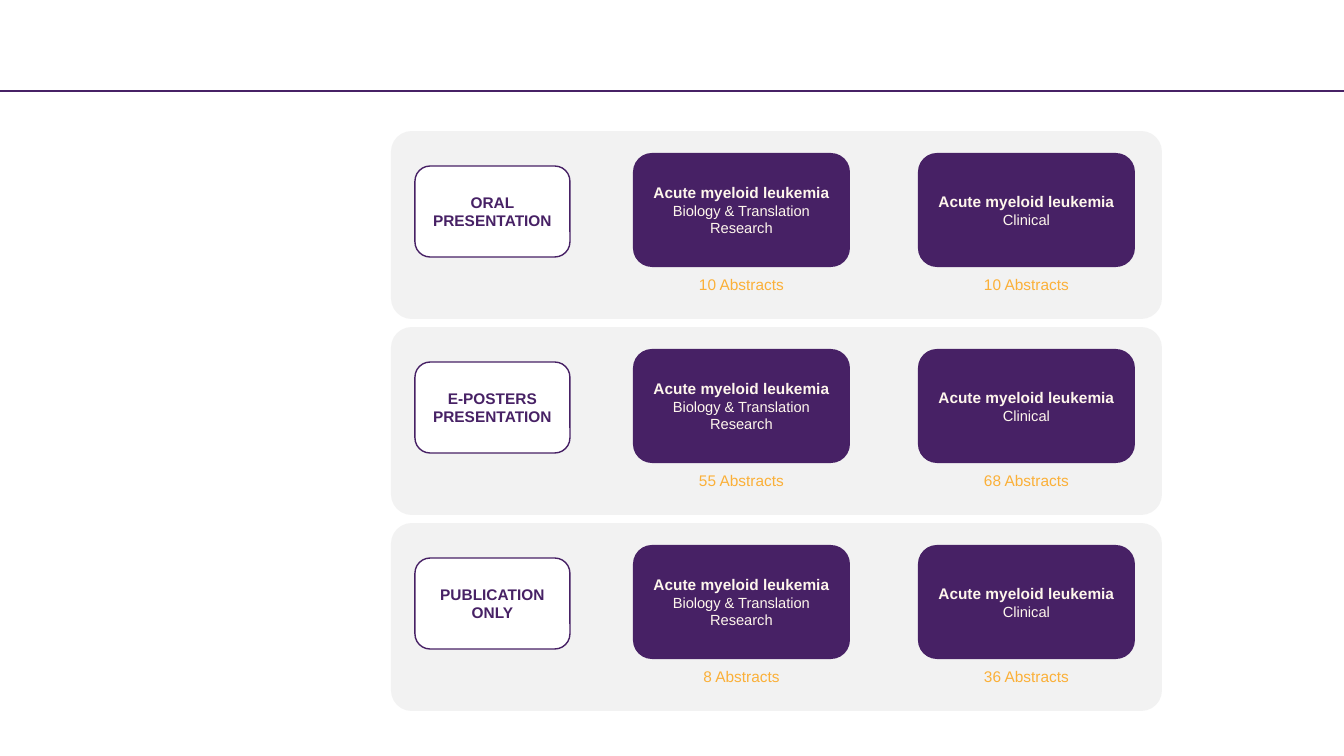
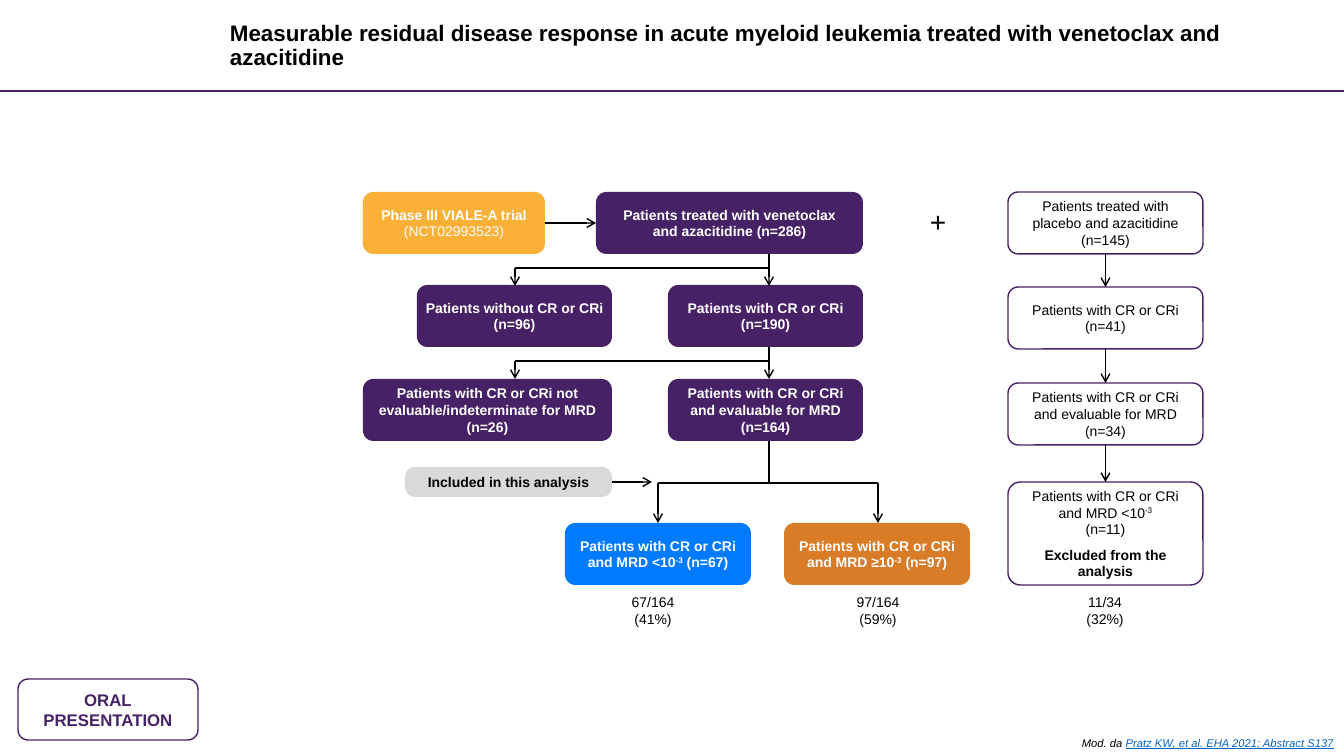
from itertools import pairwise

from lxml.etree import SubElement
from pptx import Presentation
from pptx.dml.color import RGBColor
from pptx.enum.shapes import MSO_CONNECTOR, MSO_SHAPE
from pptx.enum.text import MSO_ANCHOR, PP_ALIGN
from pptx.oxml.ns import qn
from pptx.util import Emu, Pt

SCALE = 914400 / 100.8  # EMU in one px
WIDTH, HEIGHT = 1344, 756
FONT = "Arial"

PURPLE = RGBColor(0x47, 0x21, 0x65)
AMBER = RGBColor(0xFB, 0xB0, 0x38)
ORANGE = RGBColor(0xD8, 0x7C, 0x27)
BLUE = RGBColor(0x00, 0x7A, 0xFF)
LINK = RGBColor(0x05, 0x63, 0xC1)
CREAM = RGBColor(0xFE, 0xF6, 0xEC)
PANEL = RGBColor(0xF2, 0xF2, 0xF2)
GREY = RGBColor(0xD9, 0xD9, 0xD9)
WHITE = RGBColor(0xFF, 0xFF, 0xFF)
BLACK = RGBColor(0x00, 0x00, 0x00)

POWER = ("-3", {"raised": True})


def px(n):
    return Emu(round(n * SCALE))


# Text
def add_run(p, text, size=10, color=BLACK, bold=False, italic=False,
            underline=False, raised=False):
    r = p.add_run()
    r.text = text
    font = r.font
    font.name, font.size = FONT, Pt(size)
    font.color.rgb = color
    font.bold, font.italic, font.underline = bold, italic, underline
    if raised:
        r._r.get_or_add_rPr().set("baseline", "30000")


def write(sp, paragraphs, align=PP_ALIGN.CENTER, anchor=MSO_ANCHOR.MIDDLE,
          inset=10, last_gap=0, spacing=None, **style):
    """Each paragraph is a string or a list of strings and (text, style) runs."""
    tf = sp.text_frame
    tf.word_wrap = True
    tf.vertical_anchor = anchor
    tf.margin_left = tf.margin_right = px(inset)
    tf.margin_top = tf.margin_bottom = px(5)
    for i, runs in enumerate(paragraphs):
        p = tf.add_paragraph() if i else tf.paragraphs[0]
        p.alignment = align
        if spacing:
            p.line_spacing = spacing
        for run in [runs] if isinstance(runs, str) else runs:
            text, extra = (run, {}) if isinstance(run, str) else run
            add_run(p, text, **{**style, **extra})
    if last_gap:
        p.space_before = Pt(last_gap)


def add_text(s, box, paragraphs, anchor=MSO_ANCHOR.TOP, **style):
    sp = s.shapes.add_textbox(*map(px, box))
    write(sp, paragraphs, anchor=anchor, **style)


# Shapes and lines
def add_box(s, box, paragraphs=(), fill=None, line=None, radius=None, **style):
    sp = s.shapes.add_shape(MSO_SHAPE.ROUNDED_RECTANGLE, *map(px, box))
    sp.shadow.inherit = False
    if radius is not None:
        sp.adjustments[0] = radius
    if fill is None:
        sp.fill.background()
    else:
        sp.fill.solid()
        sp.fill.fore_color.rgb = fill
    if line is None:
        sp.line.fill.background()
    else:
        sp.line.color.rgb = line
        sp.line.width = Pt(1)
    if paragraphs:
        write(sp, paragraphs, **style)
    return sp


def add_line(s, x1, y1, x2, y2, color=BLACK, width=1, arrow=False):
    line = s.shapes.add_connector(MSO_CONNECTOR.STRAIGHT, *map(px, (x1, y1, x2, y2)))
    line.line.color.rgb = color
    line.line.width = Pt(width)
    if arrow:
        SubElement(line.line._get_or_add_ln(), qn("a:tailEnd"), type="arrow")
    SubElement(line._element.spPr, qn("a:effectLst"))
    return line


def link_boxes(s, start, start_site, end, end_site):
    line = add_line(s, 0, 0, 0, 0, arrow=True)
    line.begin_connect(start, start_site)
    line.end_connect(end, end_site)


def add_fork(s, trunk_x, top, bar_y, bottom, left, right):
    add_line(s, trunk_x, top, trunk_x, bar_y)
    add_line(s, left, bar_y, right, bar_y)
    for x in (left, right):
        add_line(s, x, bar_y, x, bottom, arrow=True)


# Shared slide parts
def add_slide(prs, title=None):
    s = prs.slides.add_slide(prs.slide_layouts[6])
    add_line(s, 0, 91, WIDTH, 91, PURPLE, 2)
    if title:
        add_text(s, (220, 13, 1100, 66), [title], MSO_ANCHOR.MIDDLE,
                 align=PP_ALIGN.LEFT, size=16, bold=True, spacing=0.9)
    return s


def add_category(s, box, lines, size):
    add_box(s, box, lines, WHITE, PURPLE, size=size, color=PURPLE, bold=True)


# Slide 1: abstracts by category
def build_overview(prs):
    s = add_slide(prs)
    topics = [(633, "Biology & Translation Research"), (918, "Clinical")]
    categories = [
        (["ORAL", "PRESENTATION"], (10, 10)),
        (["E-POSTERS", "PRESENTATION"], (55, 68)),
        (["PUBLICATION", "ONLY"], (8, 36)),
    ]
    for i, (lines, counts) in enumerate(categories):
        top = 131 + 196 * i
        add_box(s, (391, top, 771, 188), fill=PANEL, radius=0.11)
        add_category(s, (415, top + 35, 155, 91), lines, 11)
        for (left, topic), count in zip(topics, counts):
            add_box(s, (left, top + 22, 217, 114),
                    [[("Acute myeloid leukemia", {"size": 11, "bold": True})], topic],
                    PURPLE, size=10.5, color=CREAM)
            add_text(s, (left, top + 139, 217, 29), [f"{count} Abstracts"],
                     size=11, color=AMBER)


# Slide 2: patient flow
def build_flow(prs):
    s = add_slide(prs, "Measurable residual disease response in acute myeloid "
                       "leukemia treated with venetoclax and azacitidine")
    add_category(s, (18, 679, 180, 61), ["ORAL", "PRESENTATION"], 12)
    responders = "Patients with CR or CRi"
    box_h = 62

    # Treated patients
    def add_step(left, top, width, paragraphs, fill=PURPLE, inset=10):
        return add_box(s, (left, top, width, box_h), paragraphs, fill,
                       color=WHITE, bold=True, inset=inset)

    trial = add_step(363, 192, 182, ["Phase III VIALE-A trial",
                                     [("(NCT02993523)", {"bold": False})]], AMBER)
    treated = add_step(596, 192, 267, ["Patients treated with venetoclax",
                                       "and azacitidine (n=286)"])
    link_boxes(s, trial, 3, treated, 1)
    add_step(417, 285, 195, ["Patients without CR or CRi", "(n=96)"], inset=0)
    add_step(668, 285, 195, [responders, "(n=190)"])
    add_step(363, 379, 249, ["Patients with CR or CRi not "
                             "evaluable/indeterminate for MRD", "(n=26)"], inset=0)
    add_step(668, 379, 195, [responders, "and evaluable for MRD (n=164)"])
    add_step(565, 523, 186, [responders, ["and MRD <10", POWER, " (n=67)"]], BLUE)
    add_step(784, 523, 186, [responders, ["and MRD ≥10", POWER, " (n=97)"]], ORANGE)

    add_fork(s, 769, 254, 268, 286, 515, 769)
    add_fork(s, 769, 347, 361, 379, 515, 769)
    add_fork(s, 769, 441, 483, 523, 658, 878)

    add_box(s, (405, 467, 207, 30), ["Included in this analysis"], GREY,
            radius=0.34, bold=True)
    add_line(s, 612, 482, 652, 482, arrow=True)

    # Control patients
    add_text(s, (921, 200, 34, 40), ["+"], size=20, inset=0)
    controls = [
        (192, ["Patients treated with placebo and azacitidine", "(n=145)"]),
        (287, [responders, "(n=41)"]),
        (383, [responders, "and evaluable for MRD", "(n=34)"]),
    ]
    column = [add_box(s, (1008, top, 195, box_h), lines, line=PURPLE)
              for top, lines in controls]
    column.append(add_box(
        s, (1008, 482, 195, 103),
        [responders, ["and MRD <10", POWER], "(n=11)",
         [("Excluded from the analysis", {"bold": True})]],
        line=PURPLE, radius=0.12, last_gap=6))
    for upper, lower in pairwise(column):
        link_boxes(s, upper, 2, lower, 0)

    # Shares under the final groups
    for center, share in [(653, ("67/164", "(41%)")), (878, ("97/164", "(59%)")),
                          (1105, ("11/34", "(32%)"))]:
        add_text(s, (center - 48, 589, 96, 42), share)

    # Reference
    add_text(s, (1024, 731, 320, 24),
             [["Mod. da ", ("Pratz KW, et al. EHA 2021; Abstract S137",
                            {"color": LINK, "underline": True})]],
             align=PP_ALIGN.RIGHT, size=8, italic=True)


def main():
    prs = Presentation()
    prs.slide_width, prs.slide_height = px(WIDTH), px(HEIGHT)
    build_overview(prs)
    build_flow(prs)
    prs.save("out.pptx")


if __name__ == "__main__":
    main()
